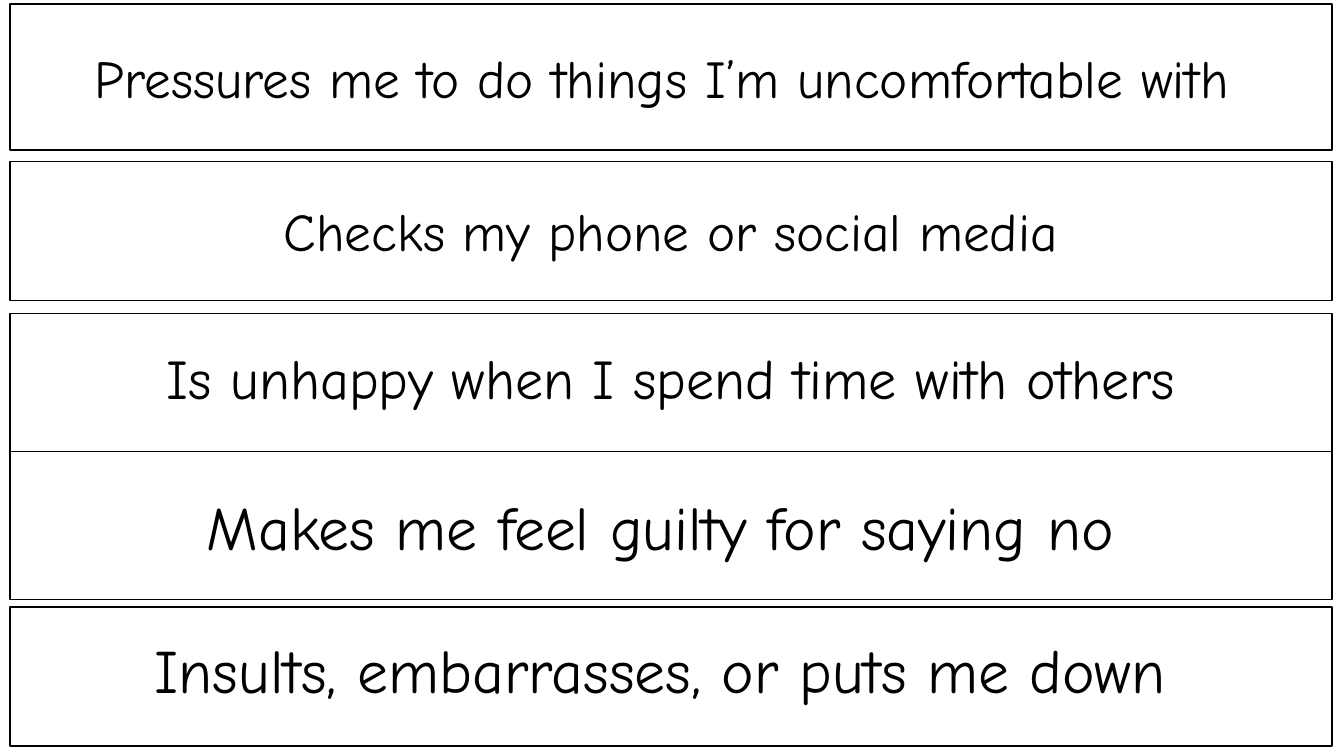
from pptx import Presentation
from pptx.dml.color import RGBColor
from pptx.enum.shapes import MSO_SHAPE as Shape
from pptx.enum.text import MSO_ANCHOR as Anchor, MSO_AUTO_SIZE as AutoSize, PP_ALIGN as Align
from pptx.util import Inches, Pt

BLANK_LAYOUT = 6
LEFT, WIDTH = 0.75, 98.35
LINE_SPACING = 1.21

# Card top, card height and text top in percent of slide height; text size in points
STATEMENTS = [
    (0.53, 19.33, 5.33, 38, "Pressures me to do things I’m uncomfortable with "),
    (21.33, 18.4, 25.6, 38, "Checks my phone or social media"),
    (41.47, 18.4, 44.8, 40, "Is unhappy when I spend time with others"),
    (59.73, 19.6, 64, 44, "Makes me feel guilty for saying no "),
    (80.27, 18.4, 82.93, 44, "Insults, embarrasses, or puts me down "),
]


def color(code):
    return RGBColor.from_string(code)


def write(box, text, size, font="Comic Neue", ink="000000", align=Align.CENTER):
    para = box.text_frame.paragraphs[0]
    para.alignment = align
    span = para.add_run()
    span.text = text
    span.font.name = font
    span.font.size = Pt(size)
    span.font.color.rgb = color(ink)


class CardSheet:
    """Draws on one slide, with lengths in percent of its size."""

    paper = "FFFFFF"
    ink = "000000"

    def __init__(self, deck):
        self.deck = deck
        self.slide = deck.slides.add_slide(deck.slide_layouts[BLANK_LAYOUT])

    def area(self, left, top, width, height):
        across, down = self.deck.slide_width / 100, self.deck.slide_height / 100
        return [round(length) for length in
                (left * across, top * down, width * across, height * down)]

    def card(self, top, height):
        card = self.slide.shapes.add_shape(
            Shape.RECTANGLE, *self.area(LEFT, top, WIDTH, height))
        card.shadow.inherit = False
        card.fill.solid()
        card.fill.fore_color.rgb = color(self.paper)
        card.line.color.rgb = color(self.ink)
        card.line.width = Pt(1)

    def statement(self, top, size, text):
        """Adds one centred line of text in a box as tall as the line."""
        margins = Inches(0.1)
        height = (Pt(size * LINE_SPACING) + margins) / self.deck.slide_height * 100
        box = self.slide.shapes.add_textbox(*self.area(LEFT, top, WIDTH, height))
        frame = box.text_frame
        frame.word_wrap = True
        frame.auto_size = AutoSize.SHAPE_TO_FIT_TEXT
        frame.vertical_anchor = Anchor.TOP
        write(box, text, size, ink=self.ink)


def main():
    deck = Presentation()
    deck.slide_width, deck.slide_height = Inches(13.33), Inches(7.5)
    sheet = CardSheet(deck)
    for card_top, card_height, text_top, size, text in STATEMENTS:
        sheet.card(card_top, card_height)
        sheet.statement(text_top, size, text)
    deck.save("out.pptx")


if __name__ == "__main__":
    main()
